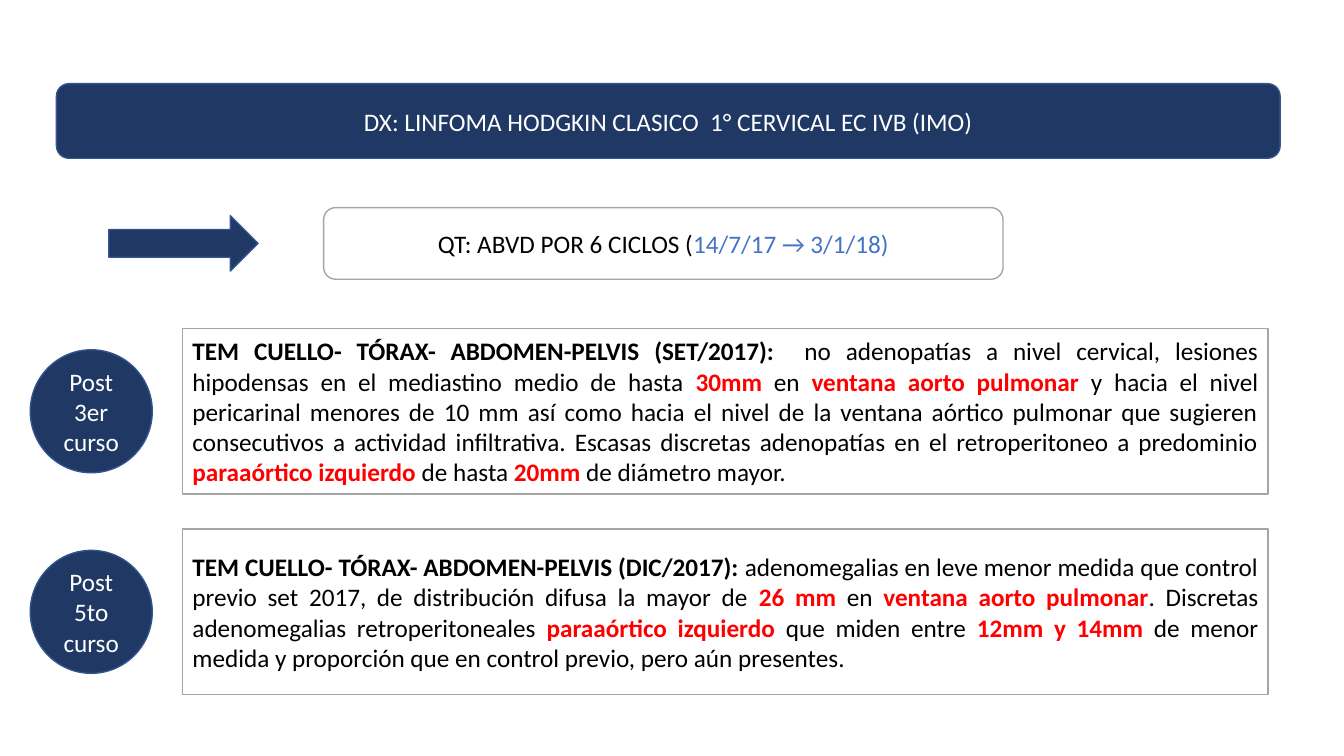
from typing import NamedTuple

from lxml import etree
from pptx import Presentation
from pptx.dml.color import RGBColor
from pptx.enum.shapes import MSO_SHAPE
from pptx.enum.text import MSO_ANCHOR, MSO_AUTO_SIZE, PP_ALIGN
from pptx.util import Inches, Pt

RECT, ROUNDED = MSO_SHAPE.RECTANGLE, MSO_SHAPE.ROUNDED_RECTANGLE
OVAL, ARROW = MSO_SHAPE.OVAL, MSO_SHAPE.RIGHT_ARROW
CENTER, JUSTIFY = PP_ALIGN.CENTER, PP_ALIGN.JUSTIFY
MIDDLE, NO_AUTOFIT = MSO_ANCHOR.MIDDLE, MSO_AUTO_SIZE.NONE
TITLE_ONLY = 5
SLIDE_WIDTH, SLIDE_HEIGHT = Inches(13.333), Inches(7.5)
COLORS = {
    "navy": "203864", "navy_line": "325491", "gray_line": "A5A5A5",
    "white": "FFFFFF", "black": "000000", "blue": "4472C4", "red": "FF0000",
}


class Area(NamedTuple):
    """Position and size in percent of the slide's width and height."""
    left: float
    top: float
    width: float
    height: float

    def emu(self) -> tuple[int, int, int, int]:
        return (int(SLIDE_WIDTH * self.left / 100), int(SLIDE_HEIGHT * self.top / 100),
                int(SLIDE_WIDTH * self.width / 100), int(SLIDE_HEIGHT * self.height / 100))


class Run(NamedTuple):
    text: str
    color: str = "black"
    bold: bool = False


class Study(NamedTuple):
    course: str
    findings: list[Run]


def heading(text: str) -> Run:
    return Run(text, bold=True)


def key(text: str) -> Run:
    return Run(text, "red", True)


BANNER = Area(4.2, 11.07, 91.05, 9.87)
TREATMENT = Area(24.08, 27.47, 50.55, 9.47)
TREATMENT_ARROW = Area(8.1, 28.53, 11.1, 7.33)
FIRST_REPORT = Area(13.58, 43.47, 80.78, 21.87)
FIRST_COURSE = Area(2.25, 46.27, 9.08, 16.27)
STUDY_PITCH = 26.53

DIAGNOSIS = [Run("DX: LINFOMA HODGKIN CLASICO  1° CERVICAL EC IVB (IMO)", "white")]
CHEMOTHERAPY = [Run("QT: ABVD POR 6 CICLOS ("), Run("14/7/17 → 3/1/18)", "blue")]
STUDIES = [
    Study("Post 3er curso", [
        heading("TEM CUELLO- TÓRAX- ABDOMEN-PELVIS (SET/2017):  "),
        Run("no adenopatías a nivel cervical, lesiones hipodensas en el "
            "mediastino medio de hasta "),
        key("30mm "),
        Run("en "),
        key("ventana aorto pulmonar "),
        Run("y hacia el nivel pericarinal menores de 10 mm así como hacia el nivel "
            "de la ventana aórtico pulmonar que sugieren consecutivos a actividad "
            "infiltrativa. Escasas discretas adenopatías en el retroperitoneo a "
            "predominio "),
        key("paraaórtico izquierdo "),
        Run("de hasta "),
        key("20mm "),
        Run("de diámetro mayor."),
    ]),
    Study("Post 5to curso", [
        heading("TEM CUELLO- TÓRAX- ABDOMEN-PELVIS (DIC/2017): "),
        Run("adenomegalias en leve menor medida que control previo set 2017, de "
            "distribución difusa la mayor de "),
        key("26 mm"),
        Run(" en "),
        key("ventana aorto pulmonar"),
        Run(". Discretas adenomegalias retroperitoneales "),
        key("paraaórtico izquierdo "),
        Run("que miden entre "),
        key("12mm y 14mm "),
        Run("de menor medida y proporción que en control previo, pero aún presentes."),
    ]),
]


def rgb(name: str) -> RGBColor:
    return RGBColor.from_string(COLORS[name])


def write_text(shape, runs: list[Run], *, align=CENTER, size: float = 18,
               font: str = "Calibri") -> None:
    frame = shape.text_frame
    frame.word_wrap = True
    frame.auto_size = NO_AUTOFIT
    frame.vertical_anchor = MIDDLE
    paragraph = frame.paragraphs[0]
    paragraph.alignment = align
    for part in runs:
        run = paragraph.add_run()
        run.text = part.text
        run.font.name, run.font.size = font, Pt(size)
        run.font.bold = part.bold
        run.font.color.rgb = rgb(part.color)


def add_block(slide, kind, area: Area, *, fill: str = "navy", line: str = "navy_line"):
    block = slide.shapes.add_shape(kind, *area.emu())
    block.shadow.inherit = False
    block.fill.solid()
    block.fill.fore_color.rgb = rgb(fill)
    block.line.color.rgb = rgb(line)
    block.line.width = Pt(1)
    return block


def add_diagnosis(slide) -> None:
    banner = add_block(slide, ROUNDED, BANNER)
    title = slide.shapes.title
    title.left, title.top, title.width, title.height = BANNER.emu()
    write_text(title, DIAGNOSIS)
    title.element.addprevious(banner.element)


def add_study(slide, study: Study, row: int) -> None:
    shift = row * STUDY_PITCH
    report = add_block(slide, RECT, FIRST_REPORT._replace(top=FIRST_REPORT.top + shift),
                       fill="white", line="gray_line")
    write_text(report, study.findings, align=JUSTIFY)
    course = add_block(slide, OVAL, FIRST_COURSE._replace(top=FIRST_COURSE.top + shift))
    write_text(course, [Run(study.course, "white")])


def main() -> None:
    deck = Presentation()
    deck.slide_width, deck.slide_height = SLIDE_WIDTH, SLIDE_HEIGHT
    slide = deck.slides.add_slide(deck.slide_layouts[TITLE_ONLY])
    add_diagnosis(slide)
    treatment = add_block(slide, ROUNDED, TREATMENT, fill="white", line="gray_line")
    write_text(treatment, CHEMOTHERAPY)
    add_block(slide, ARROW, TREATMENT_ARROW)
    for row, study in enumerate(STUDIES):
        add_study(slide, study, row)
    deck.save("out.pptx")


if __name__ == "__main__":
    main()
